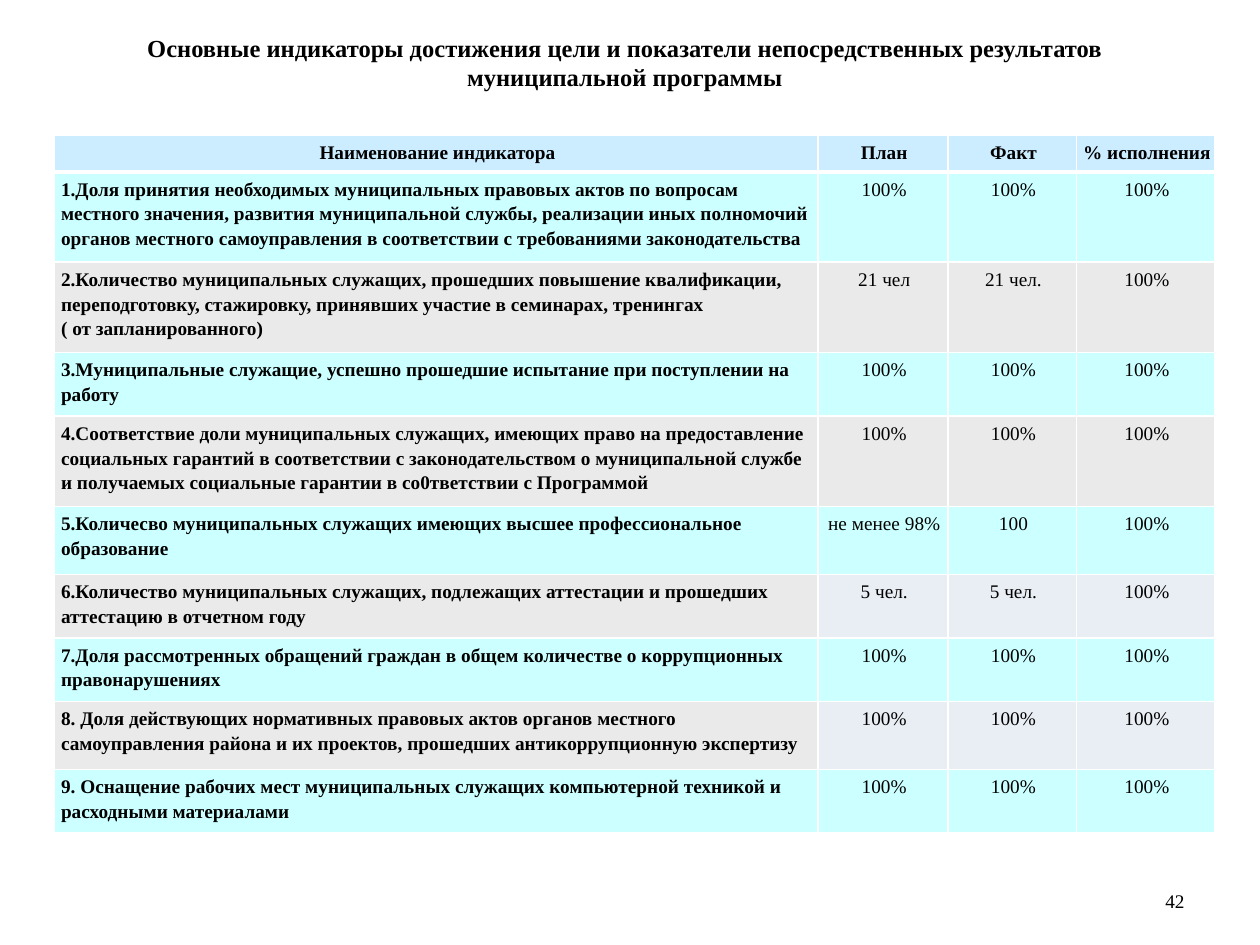
from enum import Enum

from lxml.etree import SubElement
from pptx import Presentation
from pptx.dml.color import RGBColor
from pptx.enum.text import MSO_ANCHOR as Anchor, PP_ALIGN as Align
from pptx.oxml.ns import qn
from pptx.util import Cm, Pt


class Theme:
    FONT = "Times New Roman"
    TITLE_SIZE = Pt(14)
    BODY_SIZE = Pt(11)
    TEXT = RGBColor.from_string("000000")
    BORDER = "FFFFFF"
    HEADER = RGBColor.from_string("CCECFF")
    CYAN = RGBColor.from_string("CCFFFF")
    GRAY = RGBColor.from_string("EAEAEA")
    PALE_BLUE = RGBColor.from_string("E9EDF4")


class RowHeight(Enum):
    HEADER = Cm(0.74)
    TWO_LINES = Cm(1.28)
    TWO_LINES_LOOSE = Cm(1.37)
    THREE_LINES = Cm(1.82)


def write_text(frame, text, size, bold, alignment, line_spacing=None):
    frame.word_wrap = True
    frame.text = text
    for paragraph in frame.paragraphs:
        paragraph.alignment = alignment
        paragraph.line_spacing = line_spacing
        paragraph.font.name = Theme.FONT
        paragraph.font.size = size
        paragraph.font.bold = bold
        paragraph.font.color.rgb = Theme.TEXT


def add_borders(cell, bottom_width):
    properties = cell._tc.get_or_add_tcPr()
    widths = {"lnL": Pt(1), "lnR": Pt(1), "lnT": Pt(1), "lnB": bottom_width}
    for side, width in widths.items():
        line = SubElement(properties, qn(f"a:{side}"), w=str(width))
        fill = SubElement(line, qn("a:solidFill"))
        SubElement(fill, qn("a:srgbClr"), val=Theme.BORDER)


# Row height, fill of the name cell, fill of the value cells, texts
COLUMN_WIDTHS = [Cm(15.39), Cm(2.62), Cm(2.59), Cm(2.79)]
INDICATORS = [
    (RowHeight.HEADER, Theme.HEADER, Theme.HEADER,
     ["Наименование индикатора", "План", "Факт", "% исполнения"]),
    (RowHeight.THREE_LINES, Theme.CYAN, Theme.CYAN,
     ["1.Доля принятия необходимых муниципальных правовых актов по вопросам "
      "местного значения, развития муниципальной службы, реализации иных полномочий "
      "органов местного самоуправления в соответствии с требованиями законодательства",
      "100%", "100%", "100%"]),
    (RowHeight.THREE_LINES, Theme.GRAY, Theme.GRAY,
     ["2.Количество муниципальных служащих, прошедших повышение квалификации, "
      "переподготовку, стажировку, принявших участие в семинарах, тренингах\n"
      "( от запланированного)",
      "21 чел", "21 чел.", "100%"]),
    (RowHeight.TWO_LINES, Theme.CYAN, Theme.CYAN,
     ["3.Муниципальные служащие, успешно прошедшие испытание при поступлении на работу",
      "100%", "100%", "100%"]),
    (RowHeight.THREE_LINES, Theme.GRAY, Theme.GRAY,
     ["4.Соответствие доли муниципальных служащих, имеющих право на предоставление "
      "социальных гарантий в соответствии с законодательством о муниципальной службе "
      "и получаемых социальные гарантии в со0тветствии с Программой",
      "100%", "100%", "100%"]),
    (RowHeight.TWO_LINES_LOOSE, Theme.CYAN, Theme.CYAN,
     ["5.Количесво муниципальных служащих имеющих высшее профессиональное образование",
      "не менее 98%", "100", "100%"]),
    (RowHeight.TWO_LINES, Theme.GRAY, Theme.PALE_BLUE,
     ["6.Количество муниципальных служащих, подлежащих аттестации и прошедших "
      "аттестацию в отчетном году",
      "5 чел.", "5 чел.", "100%"]),
    (RowHeight.TWO_LINES, Theme.CYAN, Theme.CYAN,
     ["7.Доля рассмотренных обращений граждан в общем количестве о коррупционных "
      "правонарушениях",
      "100%", "100%", "100%"]),
    (RowHeight.TWO_LINES_LOOSE, Theme.GRAY, Theme.PALE_BLUE,
     ["8. Доля действующих нормативных правовых актов органов местного "
      "самоуправления района и их проектов, прошедших антикоррупционную экспертизу",
      "100%", "100%", "100%"]),
    (RowHeight.TWO_LINES, Theme.CYAN, Theme.CYAN,
     ["9. Оснащение рабочих мест муниципальных служащих компьютерной техникой и "
      "расходными материалами",
      "100%", "100%", "100%"]),
]

presentation = Presentation()
presentation.slide_width = Cm(25.4)
presentation.slide_height = Cm(19.05)
slide = presentation.slides.add_slide(presentation.slide_layouts[6])

# Page number
page_number = slide.shapes.add_textbox(Cm(18.2), Cm(17.66), Cm(5.93), Cm(1.01))
page_number.text_frame.vertical_anchor = Anchor.MIDDLE
write_text(page_number.text_frame, "42", Theme.BODY_SIZE, False, Align.RIGHT)

# Table of indicators
table = slide.shapes.add_table(
    len(INDICATORS), len(COLUMN_WIDTHS), Cm(1.1), Cm(2.72),
    sum(COLUMN_WIDTHS), sum(height.value for height, *_ in INDICATORS)).table
for column, width in zip(table.columns, COLUMN_WIDTHS):
    column.width = width

for row_index, (height, name_fill, value_fill, texts) in enumerate(INDICATORS):
    is_header = row_index == 0
    table.rows[row_index].height = height.value
    for column_index, text in enumerate(texts):
        is_name = column_index == 0
        cell = table.cell(row_index, column_index)
        cell.margin_left = cell.margin_bottom = Cm(0.13)
        cell.margin_top = cell.margin_right = Cm(0.08)
        add_borders(cell, Pt(3) if is_header else Pt(1))
        cell.fill.solid()
        cell.fill.fore_color.rgb = name_fill if is_name else value_fill
        write_text(cell.text_frame, text, Theme.BODY_SIZE, is_header or is_name,
                   Align.LEFT if is_name and not is_header else Align.CENTER, 1.15)

# Title
title = slide.shapes.add_textbox(Cm(0.9), Cm(0.54), Cm(23.4), Cm(1.45))
write_text(title.text_frame,
           "Основные индикаторы достижения цели и показатели непосредственных "
           "результатов муниципальной программы",
           Theme.TITLE_SIZE, True, Align.CENTER)

presentation.save("out.pptx")
